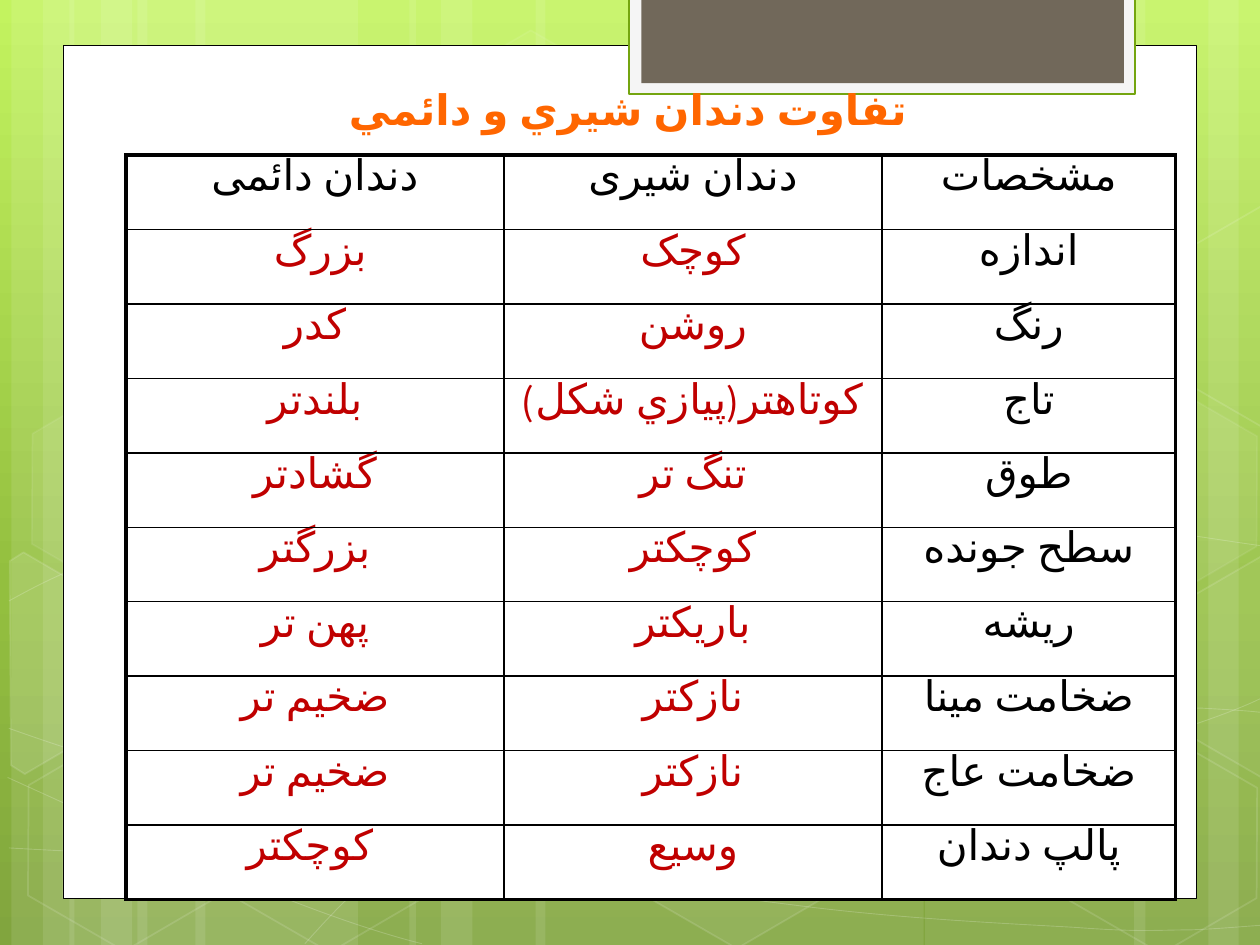
"""Builds a slide comparing milk teeth with permanent teeth in a bordered table."""
from math import cos, radians, sin

from lxml import etree
from pptx import Presentation
from pptx.dml.color import RGBColor
from pptx.enum.lang import MSO_LANGUAGE_ID
from pptx.enum.shapes import MSO_SHAPE
from pptx.enum.text import MSO_ANCHOR, PP_ALIGN
from pptx.oxml.ns import qn
from pptx.util import Inches, Pt

RECTANGLE, HEXAGON = MSO_SHAPE.RECTANGLE, MSO_SHAPE.HEXAGON
CENTER, BOTTOM = PP_ALIGN.CENTER, MSO_ANCHOR.BOTTOM
PERSIAN = MSO_LANGUAGE_ID.FARSI

THEME = {
    "sky": [(0, "C3F35F"), (62, "93BF3F"), (100, "81A53E")],
    "light": "FFFFFF", "ink": "000000", "answer": "C00000", "heading": "FF6600",
    "tab": "F5F5F5", "tab_edge": "74A510", "tab_core": "71685A",
    "heading_font": "League Spartan", "body_font": "Arial",
    "script_font": "League Spartan", "size": 24,
    "outer": 2.25, "inner": 1,
}
COLUMNS, ROWS = 10, 7.5
TITLE = "تفاوت دندان شيري و دائمي "
COMPARISON = [
    ("دندان دائمی", "دندان شیری", "مشخصات"),
    (" بزرگ", "کوچک", "اندازه"),
    ("كدر", "روشن", "رنگ"),
    ("بلندتر", "كوتاهتر(پيازي شكل)", "تاج"),
    ("گشادتر", "تنگ تر", "طوق"),
    ("بزرگتر", "كوچكتر", "سطح جونده"),
    ("پهن تر", "باريكتر", "ريشه"),
    ("ضخيم تر", "نازكتر", "ضخامت مينا"),
    ("ضخيم تر", "نازكتر", "ضخامت عاج"),
    ("كوچكتر ", "وسيع", "پالپ دندان"),
]
TABLE_BOX, TABLE_COLUMNS = (1, 1.23, 8.33, 5.91), (3, 3, 2.33)

BANDS = [(1.09, 1.75, 0), (0.09, 0.5, 0), (0.34, 0.83, 0), (1.55, 1.75, 0),
         (0.55, 0.5, 0), (0.8, 0.83, 0), (7.34, 1.75, 180), (9.59, 0.5, 180),
         (9, 0.83, 180), (4.25, 3.08, 0), (3.25, 0.5, 0), (3.5, 0.83, 0)]
WAVES = [
    [(0.07, 6.73), (0.61, 6.76), (1.15, 6.79), (1.9, 6.78), (2.65, 6.77), (3.58, 6.75),
     (4.58, 6.65), (5.58, 6.55), (7, 6.36), (7.92, 6.17), (8.83, 5.98), (9.77, 5.68),
     (10.07, 5.51)],
    [(0.07, 4.77), (0.36, 4.61), (0.65, 4.46), (1.21, 4.31), (1.78, 4.16), (2.59, 3.94),
     (3.47, 3.87), (4.36, 3.8), (5.44, 3.79), (6.54, 3.87), (7.64, 3.95), (9.47, 4.26),
     (10.07, 4.34)],
    [(0.06, 6.17), (1.27, 6.72), (2.47, 7.27), (3.35, 7.49)],
    [(0.07, 5.78), (0.38, 5.89), (0.7, 6), (1.28, 6.16), (1.86, 6.31), (2.73, 6.56),
     (3.57, 6.73), (4.4, 6.9), (5.45, 7.08), (6.28, 7.18), (7.11, 7.29), (8, 7.33),
     (8.53, 7.36), (9.06, 7.4), (9.19, 7.38), (9.45, 7.38), (9.71, 7.37), (9.89, 7.35),
     (10.07, 7.34)],
    [(2.42, 7.49), (2.6, 7.29), (2.78, 7.09), (3.02, 6.91), (3.26, 6.72), (3.6, 6.53),
     (3.88, 6.39), (4.16, 6.25), (4.33, 6.19), (4.69, 6.09), (5.06, 5.99), (5.73, 5.85),
     (6.08, 5.78), (6.44, 5.71), (6.49, 5.71), (6.8, 5.69), (7.11, 5.66), (7.6, 5.63),
     (7.94, 5.62), (8.29, 5.61), (8.86, 5.62), (8.86, 5.62), (9.08, 5.62), (9.31, 5.62),
     (9.53, 5.62), (9.71, 5.63), (9.88, 5.64), (9.97, 5.65), (10.06, 5.66), (10.03, 5.65),
     (10.06, 5.66)],
]
HEX_SIZE, HEX_TILT, HEX_CORNER = (1.75, 1.52), 30, 0.285
HEXAGONS = [(3.34, 0.36, 4, 8), (4.97, 5.89, 6, 12), (0.11, 5.91, 0, 12),
            (0.14, 3.12, 7, 8), (1.74, 5.92, 0, 12), (7.53, 4.53, 10, 12),
            (8.34, 5.93, 0, 12), (8.34, 3.14, 7, 8)]
CUT_HEXAGONS = [
    ((0.36, 5.36), 10, [(0.08, 4.45), (0.19, 4.38), (0.96, 4.83), (0.95, 5.7),
                        (0.2, 6.14), (0.09, 6.07)]),
    ((9.85, 5.2), 4, [(9.26, 4.85), (10.02, 4.41), (10.09, 4.46), (10.09, 6.13),
                      (10.02, 6.17), (9.26, 5.73)]),
    ((9.85, 2.41), 0, [(9.26, 2.07), (10.02, 1.63), (10.1, 1.68), (10.09, 3.35),
                       (10.02, 3.39), (9.26, 2.95)]),
]
PANELS = [((0.5, 0.36, 9, 6.77), "light", "ink", 0.5),
          ((4.99, -0.02, 4.02, 0.77), "tab", "tab_edge", 1.25),
          ((5.09, -0.02, 3.83, 0.68), "tab_core", None, 0)]


def paint(fill, color, opacity=100):
    if not opacity:
        fill.background()
        return
    fill.solid()
    fill.fore_color.rgb = RGBColor.from_string(color)
    if opacity < 100:
        tint = fill._xPr.find(f"{qn('a:solidFill')}/{qn('a:srgbClr')}")
        etree.SubElement(tint, qn("a:alpha"), val=str(opacity * 1000))


def dress(shape, fill, opacity, edge=None, width=0, edge_opacity=100):
    shape.shadow.inherit = False
    paint(shape.fill, fill, opacity)
    paint(shape.line.fill, edge, edge_opacity if edge else 0)
    if edge:
        shape.line.width = Pt(width)


def add_block(slide, preset, box, tilt=0):
    block = slide.shapes.add_shape(preset, *map(Inches, box))
    block.rotation = tilt
    return block


def add_outline(slide, points, close):
    start, *rest = [(Inches(x), Inches(y)) for x, y in points]
    builder = slide.shapes.build_freeform(*start)
    builder.add_line_segments(rest, close=close)
    return builder.convert_to_shape()


def add_wave(slide, controls):
    wave = add_outline(slide, controls, False)
    segments = list(wave._element.iter(qn("a:lnTo")))
    for first in range(0, len(segments), 3):
        curve = etree.Element(qn("a:cubicBezTo"))
        segments[first].addprevious(curve)
        for segment in segments[first:first + 3]:
            curve.append(segment[0])
            segment.getparent().remove(segment)
    return wave


def upright(points, center):
    c, s = cos(radians(HEX_TILT)), sin(radians(HEX_TILT))
    offsets = [(x - center[0], y - center[1]) for x, y in points]
    return [(center[0] + x * c + y * s, center[1] - x * s + y * c) for x, y in offsets]


def write(paragraph, text, font, color, bold=False):
    paragraph.alignment = CENTER
    run = paragraph.add_run()
    run.text = text
    run.font.name, run.font.size, run.font.bold = font, Pt(THEME["size"]), bold
    run.font.language_id = PERSIAN
    run.font.color.rgb = RGBColor.from_string(color)
    etree.SubElement(run.font._element, qn("a:cs"), typeface=THEME["script_font"])


def add_backdrop(slide):
    slide.background.fill.gradient()
    gradient = slide.background.fill._xPr.find(qn("a:gradFill"))
    for part in list(gradient):
        gradient.remove(part)
    stops = etree.SubElement(gradient, qn("a:gsLst"))
    for share, color in THEME["sky"]:
        stop = etree.SubElement(stops, qn("a:gs"), pos=str(share * 1000))
        etree.SubElement(stop, qn("a:srgbClr"), val=color)
    etree.SubElement(gradient, qn("a:lin"), ang="5400000", scaled="0")

    light = THEME["light"]
    for left, width, tilt in BANDS:
        dress(add_block(slide, RECTANGLE, (left, 0, width, ROWS), tilt), light, 10)
    for controls in WAVES:
        dress(add_wave(slide, controls), light, 0, light, 0.5, 20)
    for left, top, opacity, edge_opacity in HEXAGONS:
        cell = add_block(slide, HEXAGON, (left, top, *HEX_SIZE), HEX_TILT)
        cell.adjustments[0] = HEX_CORNER
        dress(cell, light, opacity, light, 1, edge_opacity)
    for center, opacity, points in CUT_HEXAGONS:
        cut = add_outline(slide, upright(points, center), True)
        cut.rotation = HEX_TILT
        dress(cut, light, opacity, light, 1, 12)
    for box, fill, edge, width in PANELS:
        dress(add_block(slide, RECTANGLE, box), THEME[fill], 100, THEME.get(edge), width)


def add_title(slide):
    frame = slide.shapes.add_textbox(*map(Inches, (0.98, 0.52, 7.92, 0.59))).text_frame
    frame.word_wrap, frame.vertical_anchor = True, BOTTOM
    heading = frame.paragraphs[0]
    write(heading, TITLE, THEME["heading_font"], THEME["heading"], True)
    heading._p.get_or_add_pPr().set("rtl", "1")


def add_border(cell, sides):
    properties = cell._tc.get_or_add_tcPr()
    for index, (side, is_outer) in enumerate(sides.items()):
        width = Pt(THEME["outer" if is_outer else "inner"])
        border = etree.Element(qn(f"a:ln{side}"), w=str(width))
        solid = etree.SubElement(border, qn("a:solidFill"))
        etree.SubElement(solid, qn("a:srgbClr"), val=THEME["ink"])
        properties.insert(index, border)


def add_comparison(slide):
    last_row, last_column = len(COMPARISON) - 1, len(TABLE_COLUMNS) - 1
    table = slide.shapes.add_table(last_row + 1, last_column + 1,
                                   *map(Inches, TABLE_BOX)).table
    table.first_row = table.horz_banding = False
    for column, width in zip(table.columns, TABLE_COLUMNS):
        column.width = Inches(width)
    for r, entries in enumerate(COMPARISON):
        for c, entry in enumerate(entries):
            cell = table.cell(r, c)
            cell.fill.background()
            add_border(cell, {"L": c == 0, "R": c == last_column,
                              "T": r == 0, "B": r == last_row})
            paragraph = cell.text_frame.paragraphs[0]
            is_label = r == 0 or c == last_column
            write(paragraph, entry, THEME["body_font"], THEME["ink" if is_label else "answer"])
            before = etree.SubElement(paragraph._p.get_or_add_pPr(), qn("a:spcBef"))
            etree.SubElement(before, qn("a:spcPct"), val="20000")


def main():
    deck = Presentation()
    deck.slide_width, deck.slide_height = Inches(COLUMNS), Inches(ROWS)
    slide = deck.slides.add_slide(deck.slide_layouts[6])
    add_backdrop(slide)
    add_title(slide)
    add_comparison(slide)
    deck.save("out.pptx")


if __name__ == "__main__":
    main()
